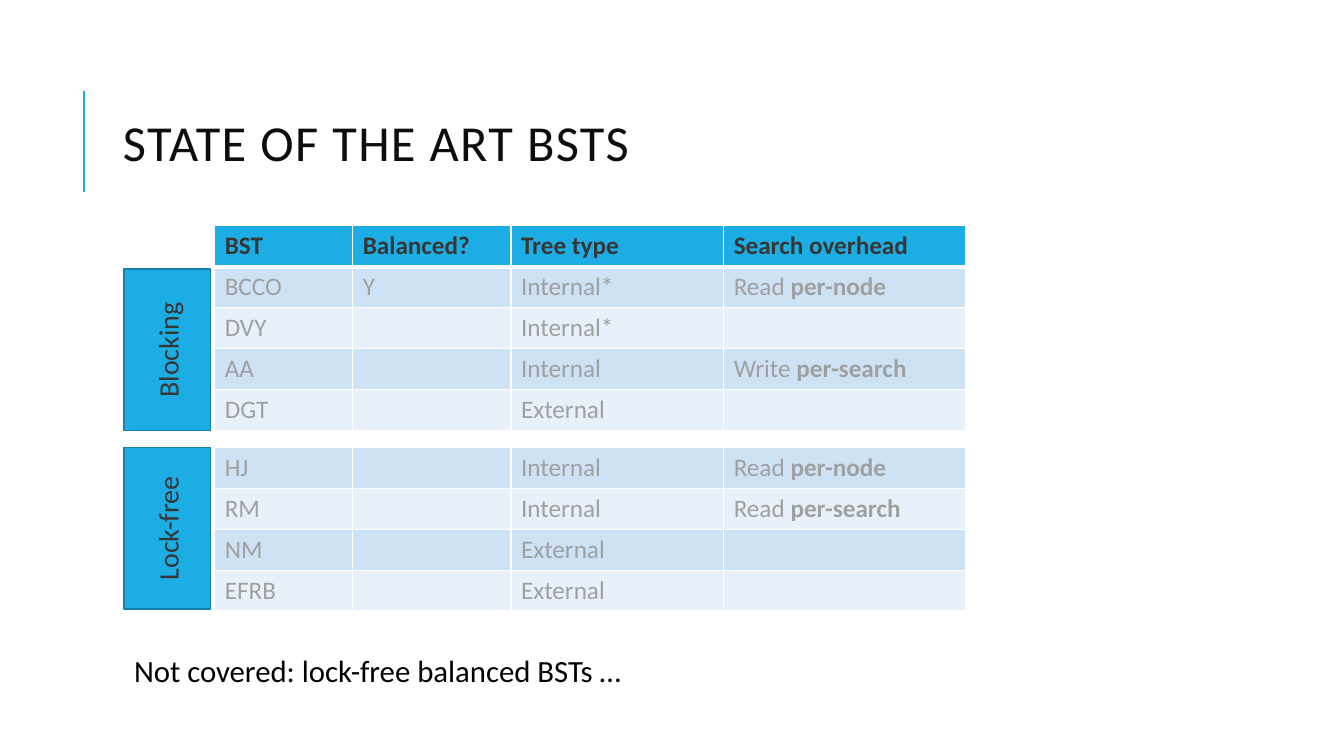
from dataclasses import dataclass

import lxml.etree
import pptx
import pptx.dml.color
import pptx.enum.shapes
import pptx.enum.text
import pptx.oxml.ns
import pptx.slide
import pptx.table
import pptx.text.text
import pptx.util

COLORS = {
    "background": "FFFFFF",
    "title": "0D0D0D",
    "note": "000000",
    "accent": "1CADE4",
    "label line": "1580A9",
    "dark text": "383635",
    "faded text": "A0A0A0",
    "border": "FFFFFF",
    "odd row": "CDE3F5",
    "even row": "E8F1FA",
}
FONT = "Calibri"
MIDDLE = pptx.enum.text.MSO_ANCHOR.MIDDLE
LEFT = pptx.enum.text.PP_ALIGN.LEFT
CENTER = pptx.enum.text.PP_ALIGN.CENTER

# The grid has ten columns and ten rows to the inch
SLIDE_COLUMNS, SLIDE_ROWS = 133.33, 75
TABLE_LEFT = 21.3
TABLE_COLUMNS = (13.7, 15.7, 21.1, 24)
TABLE_ROW = 16.2 / 4
LABEL_LENGTH, LABEL_THICKNESS, LABEL_CENTER = 16, 8.6, 16.6


def grid(units: float) -> pptx.util.Length:
    return pptx.util.Inches(units / 10)


def color(name: str) -> pptx.dml.color.RGBColor:
    return pptx.dml.color.RGBColor.from_string(COLORS[name])


@dataclass(frozen=True)
class TreeGroup:
    label: str
    top: float
    label_middle: float
    rows: tuple[tuple[str, ...], ...]  # text after "|" is bold
    header: tuple[str, ...] = ()


GROUPS = (
    TreeGroup(
        "Blocking", 22.4, 34.7,
        (
            ("BCCO", "Y", "Internal*", "Read |per-node"),
            ("DVY", "", "Internal*", ""),
            ("AA", "", "Internal", "Write |per-search"),
            ("DGT", "", "External", ""),
        ),
        header=("BST", "Balanced?", "Tree type", "Search overhead"),
    ),
    TreeGroup(
        "Lock-free", 44.4, 52.4,
        (
            ("HJ", "", "Internal", "Read |per-node"),
            ("RM", "", "Internal", "Read |per-search"),
            ("NM", "", "External", ""),
            ("EFRB", "", "External", ""),
        ),
    ),
)


def set_format(target: object, values: dict[str, object]) -> None:
    for name, value in values.items():
        setattr(target, name, value)


def add_text(paragraph: pptx.text.text._Paragraph, text: str, size: float,
             color_name: str, bold: bool = False) -> pptx.text.text._Run:
    run = paragraph.add_run()
    run.text = text
    set_format(run.font, {"name": FONT, "size": pptx.util.Pt(size), "bold": bold})
    run.font.color.rgb = color(color_name)
    return run


def add_title(slide: pptx.slide.Slide, text: str) -> None:
    title = slide.shapes.title
    set_format(title, {"left": grid(11.2), "top": grid(6.4),
                       "width": grid(106.3), "height": grid(16.4)})
    set_format(title.text_frame, {"vertical_anchor": MIDDLE, "word_wrap": True,
                                  "auto_size": pptx.enum.text.MSO_AUTO_SIZE.NONE})
    paragraph = title.text_frame.paragraphs[0]
    set_format(paragraph, {"alignment": LEFT, "line_spacing": 0.8})
    run = add_text(paragraph, text, 36, "title")
    run._r.get_or_add_rPr().set("spc", "100")


def add_title_rule(slide: pptx.slide.Slide) -> None:
    rule = slide.shapes.add_connector(
        pptx.enum.shapes.MSO_CONNECTOR.STRAIGHT, grid(8.3), grid(19), grid(8.3), grid(9))
    rule.line.color.rgb = color("accent")
    rule.line.width = pptx.util.Pt(1.5)
    lxml.etree.SubElement(rule._element.spPr, pptx.oxml.ns.qn("a:effectLst"))


def add_borders(cell: pptx.table._Cell, bottom: float, top: float) -> None:
    properties = cell._tc.get_or_add_tcPr()
    for side, points in {"L": 1, "R": 1, "T": top, "B": bottom}.items():
        line = lxml.etree.SubElement(properties, pptx.oxml.ns.qn(f"a:ln{side}"),
                                     w=str(pptx.util.Pt(points)))
        fill = lxml.etree.SubElement(line, pptx.oxml.ns.qn("a:solidFill"))
        lxml.etree.SubElement(fill, pptx.oxml.ns.qn("a:srgbClr"), val=COLORS["border"])


def fill_cell(cell: pptx.table._Cell, text: str, fill_name: str, is_header: bool,
              below_header: bool) -> None:
    add_borders(cell, bottom=3 if is_header else 1, top=3 if below_header else 1)
    cell.fill.solid()
    cell.fill.fore_color.rgb = color(fill_name)
    text_color = "dark text" if is_header else "faded text"
    paragraph = cell.text_frame.paragraphs[0]
    for position, part in enumerate(text.split("|")):
        if part:
            add_text(paragraph, part, 18, text_color, bold=is_header or position == 1)


def add_group_table(slide: pptx.slide.Slide, group: TreeGroup) -> None:
    header_rows = (group.header,) if group.header else ()
    rows = header_rows + group.rows
    table = slide.shapes.add_table(
        len(rows), len(TABLE_COLUMNS), grid(TABLE_LEFT), grid(group.top),
        grid(sum(TABLE_COLUMNS)), grid(TABLE_ROW * len(rows))).table
    set_format(table, {"first_row": bool(header_rows), "horz_banding": False})
    for column, width in zip(table.columns, TABLE_COLUMNS):
        column.width = grid(width)
    for row_index, texts in enumerate(rows):
        table.rows[row_index].height = grid(TABLE_ROW)
        data_index = row_index - len(header_rows)
        is_header = data_index < 0
        band = "even row" if data_index % 2 else "odd row"
        for column_index, text in enumerate(texts):
            fill_cell(table.cell(row_index, column_index), text,
                      "accent" if is_header else band, is_header,
                      below_header=bool(header_rows) and data_index == 0)


def add_group_label(slide: pptx.slide.Slide, group: TreeGroup) -> None:
    label = slide.shapes.add_shape(
        pptx.enum.shapes.MSO_SHAPE.RECTANGLE,
        grid(LABEL_CENTER - LABEL_LENGTH / 2),
        grid(group.label_middle - LABEL_THICKNESS / 2),
        grid(LABEL_LENGTH), grid(LABEL_THICKNESS))
    label.rotation = 270
    label.shadow.inherit = False
    label.fill.solid()
    label.fill.fore_color.rgb = color("accent")
    label.line.color.rgb = color("label line")
    label.line.width = pptx.util.Pt(1.25)
    label.text_frame.vertical_anchor = MIDDLE
    paragraph = label.text_frame.paragraphs[0]
    paragraph.alignment = CENTER
    add_text(paragraph, group.label, 20, "dark text")


def add_note(slide: pptx.slide.Slide, text: str) -> None:
    note = slide.shapes.add_textbox(grid(12.8), grid(64.2), grid(105.3), grid(5))
    inset = grid(0.5)
    set_format(note.text_frame, {"word_wrap": True, "vertical_anchor": MIDDLE,
                                 "margin_left": inset, "margin_right": inset,
                                 "margin_top": inset, "margin_bottom": inset})
    paragraph = note.text_frame.paragraphs[0]
    set_format(paragraph, {"alignment": LEFT, "line_spacing": 0.9})
    add_text(paragraph, text, 22, "note")


def main() -> None:
    presentation = pptx.Presentation()
    set_format(presentation, {"slide_width": grid(SLIDE_COLUMNS),
                              "slide_height": grid(SLIDE_ROWS)})
    slide = presentation.slides.add_slide(presentation.slide_layouts.get_by_name("Title Only"))
    slide.background.fill.solid()
    slide.background.fill.fore_color.rgb = color("background")

    # Heading
    add_title_rule(slide)
    add_title(slide, "STATE OF THE ART BSTS")

    # Tree groups and closing note
    for group in GROUPS:
        add_group_table(slide, group)
        add_group_label(slide, group)
    add_note(slide, "Not covered: lock-free balanced BSTs …")

    presentation.save("out.pptx")


if __name__ == "__main__":
    main()
